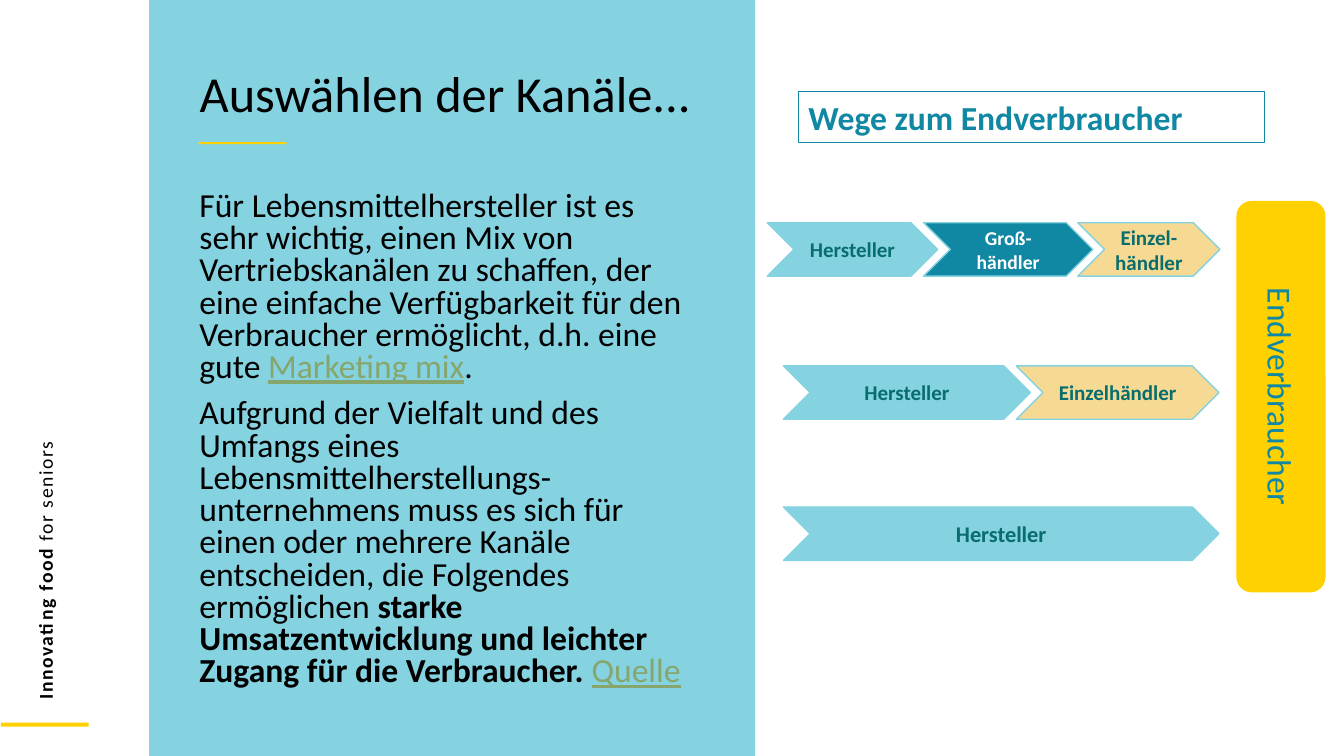
from pptx import Presentation
from pptx.dml.color import RGBColor
from pptx.enum.shapes import MSO_SHAPE
from pptx.enum.text import MSO_ANCHOR, PP_ALIGN
from pptx.util import Inches, Pt

BLACK, WHITE = "000000", "FFFFFF"
AQUA, TEAL, PINE = "85D2E1", "1188A3", "086D6E"
YELLOW, SAND, LINK = "FFD100", "F6D992", "87A66E"


def add_block(kind, box, fill, line=None, line_width=1):
    block = slide.shapes.add_shape(kind, *map(Inches, box))
    block.shadow.inherit = False
    if fill:
        block.fill.solid()
        block.fill.fore_color.rgb = RGBColor.from_string(fill)
    else:
        block.fill.background()
    if line:
        block.line.color.rgb = RGBColor.from_string(line)
        block.line.width = Pt(line_width)
    else:
        block.line.fill.background()
    return block


def add_run(paragraph, text, size, color, **formats):
    run = paragraph.add_run()
    run.text = text
    run.font.color.rgb = RGBColor.from_string(color)
    for name, value in {"name": "Calibri", "size": Pt(size), "bold": False, **formats}.items():
        setattr(run.font, name, value)
    return run


prs = Presentation()
prs.slide_width, prs.slide_height = Inches(13.33), Inches(7.5)
slide = prs.slides.add_slide(prs.slide_layouts[5])

for box, fill in [
    ((1.48, 0, 6.01, 7.5), AQUA),
    ((0.01, 7.17, 0.87, 0.04), YELLOW),
    ((1.97, 1.41, 0.87, 0.02), YELLOW),
]:
    add_block(MSO_SHAPE.RECTANGLE, box, fill)

tagline = slide.shapes.add_textbox(Inches(-3.32), Inches(3.1), Inches(7.54), Inches(0.34))
tagline.rotation = 270
tagline.text_frame.word_wrap = True
for text, bold in [("Innovating food ", True), ("for seniors", False)]:
    run = add_run(tagline.text_frame.paragraphs[0], text, 14, BLACK, bold=bold)
    run.font._element.set("spc", "110")

title = slide.shapes.title
title.element.getparent().append(title.element)
title_box = {"left": 1.88, "top": 0.65, "width": 5.16, "height": 0.64}
for name, value in title_box.items():
    setattr(title, name, Inches(value))
title.text_frame.vertical_anchor = MSO_ANCHOR.MIDDLE
heading = title.text_frame.paragraphs[0]
heading.alignment = PP_ALIGN.LEFT
heading.line_spacing = 0.8
add_run(heading, "Auswählen der Kanäle...", 36, BLACK)

body = slide.shapes.add_textbox(Inches(1.88), Inches(1.85), Inches(5.16), Inches(5.35)).text_frame
body.word_wrap = True
link_format = {"underline": True}
body_paragraphs = [
    [
        ("Für Lebensmittelhersteller ist es sehr wichtig, einen Mix von Vertriebskanälen "
         "zu schaffen, der eine einfache Verfügbarkeit für den Verbraucher ermöglicht, "
         "d.h. eine gute ", BLACK, {}),
        ("Marketing mix", LINK, link_format),
        (".", BLACK, {}),
    ],
    [
        ("Aufgrund der Vielfalt und des Umfangs eines Lebensmittelherstellungs-unternehmens "
         "muss es sich für einen oder mehrere Kanäle entscheiden, die Folgendes "
         "ermöglichen ", BLACK, {}),
        ("starke Umsatzentwicklung und leichter Zugang für die Verbraucher. ", BLACK, {"bold": True}),
        ("Quelle", LINK, link_format),
    ],
]
for index, runs in enumerate(body_paragraphs):
    paragraph = body.add_paragraph() if index else body.paragraphs[0]
    paragraph.line_spacing = 0.8
    paragraph.space_before = Pt(10 if index else 0)
    for text, color, formats in runs:
        add_run(paragraph, text, 24, color, **formats)

channels = [
    (2.21, [
        (7.61, 1.69, "Hersteller", 15, AQUA, PINE),
        (9.16, 1.68, "Groß-händler", 14, TEAL, WHITE),
        (10.69, 1.41, "Einzel-händler", 15, SAND, PINE),
    ]),
    (3.63, [
        (7.77, 2.45, "Hersteller", 15, AQUA, PINE),
        (10.08, 2.01, "Einzelhändler", 15, SAND, PINE),
    ]),
    (5.03, [(7.77, 4.32, "Hersteller", 16, AQUA, PINE)]),
]
for top, steps in channels:
    for left, width, text, size, fill, color in steps:
        step = add_block(MSO_SHAPE.CHEVRON, (left, top, width, 0.53), fill, AQUA)
        step.text_frame.word_wrap = True
        step.text_frame.vertical_anchor = MSO_ANCHOR.MIDDLE
        label = step.text_frame.paragraphs[0]
        label.alignment = PP_ALIGN.CENTER
        add_run(label, text, size, color, bold=True)

consumer = add_block(MSO_SHAPE.ROUNDED_RECTANGLE, (12.27, 2, 0.87, 3.87), YELLOW, YELLOW)
consumer.element.txBody.bodyPr.set("vert", "vert")
consumer.text_frame.vertical_anchor = MSO_ANCHOR.MIDDLE
consumer.text_frame.paragraphs[0].alignment = PP_ALIGN.CENTER
add_run(consumer.text_frame.paragraphs[0], "Endverbraucher", 24, TEAL)

routes = add_block(MSO_SHAPE.RECTANGLE, (7.92, 0.91, 4.62, 0.5), None, TEAL, 0.75)
routes.text_frame.vertical_anchor = MSO_ANCHOR.TOP
routes.text_frame.paragraphs[0].alignment = PP_ALIGN.LEFT
add_run(routes.text_frame.paragraphs[0], "Wege zum Endverbraucher", 24, TEAL, bold=True)

prs.save("out.pptx")
